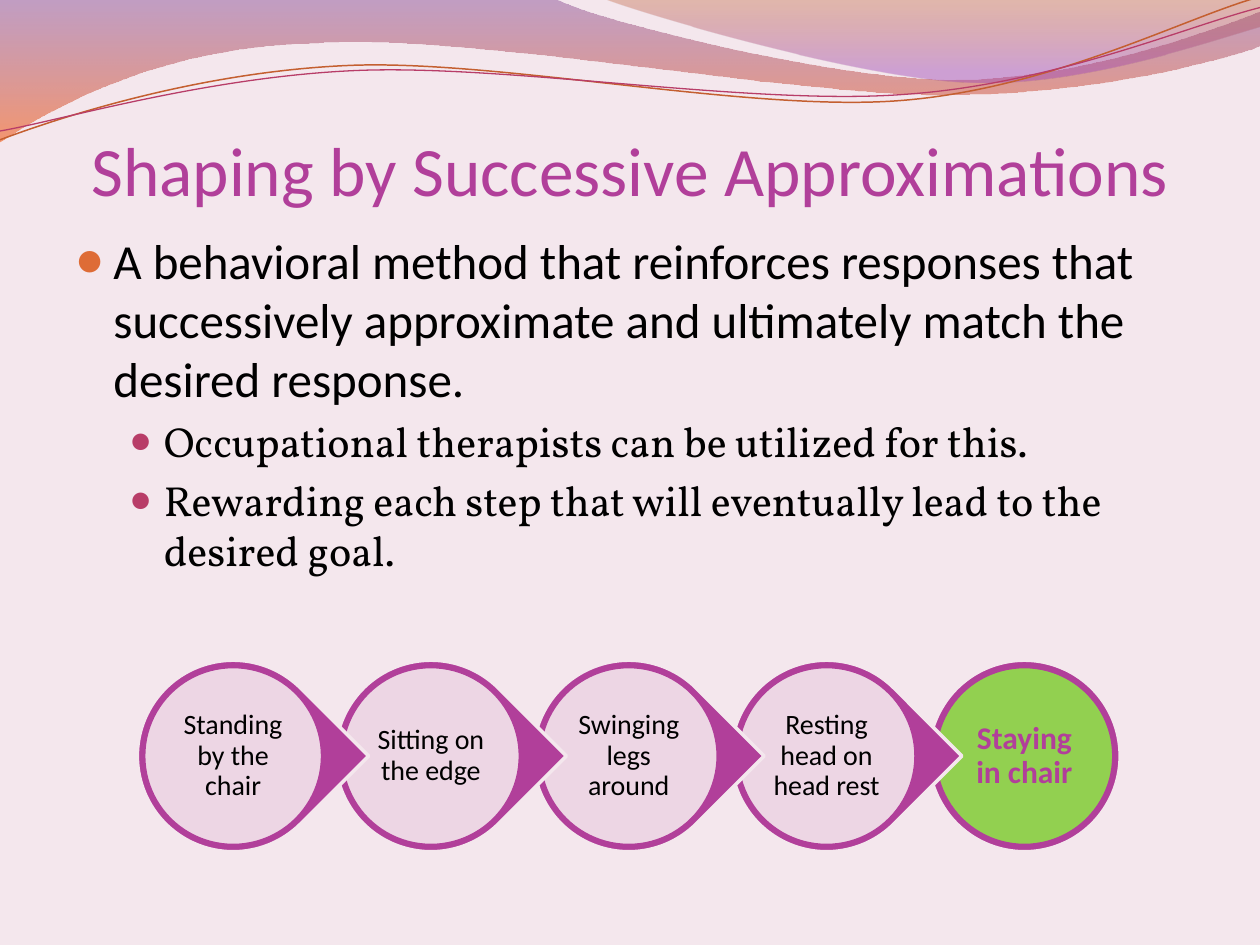
from lxml import etree
from pptx import Presentation
from pptx import util as u
from pptx.dml.color import RGBColor
from pptx.enum import shapes, text
from pptx.oxml import ns

COLORS = {
    "back": "F4E7ED", "accent": "B13F9A", "goal": "92D050", "ink": "000000",
    "plum": "834591", "orange": "F35307", "rust": "B74915", "violet": "A14BB4",
    "copper": "C45F30", "rose": "B83D68", "bullet": "DE6C36",
}
TITLE = "Shaping by Successive Approximations"
BODY = [
    (0, "A behavioral method that reinforces responses that successively "
        "approximate and ultimately match the desired response."),
    (1, "Occupational therapists can be utilized for this."),
    (1, "Rewarding each step that will eventually lead to the desired goal."),
]
LEVELS = [
    dict(size=28, font="Calibri", bullet="bullet", percent=95, indent=0.3, hang=0.3),
    dict(size=24, font="Vollkorn", bullet="rose", percent=85, indent=0.7, hang=0.27),
]
STEPS = ["Standing by the chair", "Sitting on the edge", "Swinging legs around",
         "Resting head on head rest", "Staying in chair"]
BANDS = [
    ([(0, 0), (4.4, -0.01), (4.76, 0.17, 6.64, 0.63, 7.58, 0.63),
      (8.53, 0.63, 9.58, 0.26, 10, 0.09), (10.01, 0.36),
      (9.83, 0.44, 8.7, 0.76, 7.46, 0.75), (6.22, 0.75, 3.82, 0.28, 2.57, 0.34),
      (1.29, 0.36, 0.46, 0.83, -0.01, 1.13)],
     [(0, "plum", 45), (1, "orange", 55)]),
    ([(4.79, -0.01), (5.09, 0.11, 6.82, 0.62, 7.69, 0.65),
      (8.56, 0.69, 9.61, 0.32, 10, 0.21), (10, 0)],
     [(0, "rust", 30), (0.8, "violet", 45)]),
]
CURVES = [
    ([(0, 1.11), (0.48, 0.93, 1.58, 0.57, 2.77, 0.52),
      (3.95, 0.47, 5.93, 0.89, 7.13, 0.8), (8.33, 0.71, 9.38, 0.15, 9.98, -0.02)],
     "copper", 0.85),
    ([(0, 1.04), (0.47, 0.96, 1.64, 0.61, 2.83, 0.56),
      (4.03, 0.51, 5.97, 0.84, 7.17, 0.75), (8.36, 0.67, 9.41, 0.21, 10, 0.06)],
     "rose", 0.75),
]
FIRST_CENTER, PITCH, CENTER_Y = 1.85, 1.57, 6
DROP, DISC, LABEL = 1.52, 1.42, 1.01


def color(name):
    return RGBColor.from_string(COLORS[name])


def set_opacity(shape, percents):
    for tone, percent in zip(shape.element.spPr.iter(ns.qn("a:srgbClr")), percents):
        etree.SubElement(tone, ns.qn("a:alpha"), val=str(percent * 1000))


def add_outline(page, commands, close):
    points = [(u.Inches(command[i]), u.Inches(command[i + 1]))
              for command in commands for i in range(0, len(command), 2)]
    builder = page.shapes.build_freeform(*points[0])
    builder.add_line_segments(points[1:], close=close)
    shape = builder.convert_to_shape()
    shape.shadow.inherit = False
    segments = iter(list(shape.element.spPr.iter(ns.qn("a:lnTo"))))
    for command in commands[1:]:
        group = [next(segments) for _ in range(len(command) // 2)]
        if len(group) == 3:
            bend = etree.Element(ns.qn("a:cubicBezTo"))
            group[0].addprevious(bend)
            for segment in group:
                bend.append(segment[0])
                segment.getparent().remove(segment)
    return shape


def write(para, words, size, font="Calibri", tone="ink", bold=False, align=None):
    span = para.add_run()
    span.text = words
    span.font.size = u.Pt(size)
    span.font.name = font
    span.font.bold = bold
    span.font.color.rgb = color(tone)
    para.alignment = align


def set_frame(frame, anchor, margins):
    frame.word_wrap = True
    frame.auto_size = text.MSO_AUTO_SIZE.NONE
    frame.vertical_anchor = anchor
    (frame.margin_left, frame.margin_top,
     frame.margin_right, frame.margin_bottom) = [u.Inches(m) for m in margins]


def place(shape, left, top, width, height):
    shape.left, shape.top, shape.width, shape.height = [
        u.Inches(n) for n in (left, top, width, height)]


def set_bullet(para, tone, percent, indent, hang):
    props = para._p.get_or_add_pPr()
    props.set("marL", str(u.Inches(indent)))
    props.set("indent", str(u.Inches(-hang)))
    holder = etree.SubElement(props, ns.qn("a:buClr"))
    etree.SubElement(holder, ns.qn("a:srgbClr"), val=COLORS[tone])
    etree.SubElement(props, ns.qn("a:buSzPct"), val=str(percent * 1000))
    etree.SubElement(props, ns.qn("a:buFont"), typeface="Calibri")
    etree.SubElement(props, ns.qn("a:buChar"), char="●")


def centered(center, size):
    return [u.Inches(n) for n in (center - size / 2, CENTER_Y - size / 2, size, size)]


def add_round(page, kind, center, size, fill, line):
    shape = page.shapes.add_shape(kind, *centered(center, size))
    shape.shadow.inherit = False
    shape.fill.solid()
    shape.fill.fore_color.rgb = color(fill)
    shape.line.color.rgb = color(line)
    shape.line.width = u.Pt(2)
    return shape


def add_waves(page):
    for commands, stops in BANDS:
        band = add_outline(page, commands, True)
        band.line.fill.background()
        band.fill.gradient()
        band.fill.gradient_angle = 270
        for stop, (position, tone, _) in zip(band.fill.gradient_stops, stops):
            stop.position = position
            stop.color.rgb = color(tone)
        set_opacity(band, [opacity for _, _, opacity in stops])
    for commands, tone, width in CURVES:
        curve = add_outline(page, commands, False)
        curve.fill.background()
        curve.line.color.rgb = color(tone)
        curve.line.width = u.Pt(width)


def add_copy(page):
    title, body = page.placeholders
    for holder in (title, body):
        page.shapes.element.append(holder.element)
    place(title, 0.5, 0.17, 9, 1.5)
    set_frame(title.text_frame, text.MSO_ANCHOR.BOTTOM, (0, 0.05, 0, 0))
    write(title.text_frame.paragraphs[0], TITLE, 39.6, tone="accent",
          align=text.PP_ALIGN.CENTER)
    place(body, 0.5, 1.78, 9, 4.8)
    frame = body.text_frame
    set_frame(frame, text.MSO_ANCHOR.TOP, (0.1, 0.05, 0.1, 0.05))
    for index, (level, words) in enumerate(BODY):
        para = frame.add_paragraph() if index else frame.paragraphs[0]
        style = LEVELS[level]
        para.level = level
        para.space_before = u.Pt(0.2 * style["size"] if index else 0)
        set_bullet(para, style["bullet"], style["percent"], style["indent"], style["hang"])
        write(para, words, style["size"], style["font"])


def add_steps(page):
    last = len(STEPS) - 1
    for index in range(last, -1, -1):
        goal = index == last
        center = FIRST_CENTER + index * PITCH
        kind = shapes.MSO_SHAPE.OVAL if goal else shapes.MSO_SHAPE.TEAR
        drop = add_round(page, kind, center, DROP, "accent", "back")
        drop.rotation = 0 if goal else 45
        disc = add_round(page, shapes.MSO_SHAPE.OVAL, center, DISC,
                         "goal" if goal else "back", "accent")
        if not goal:
            set_opacity(disc, [90])
        box = page.shapes.add_textbox(*centered(center, LABEL))
        set_frame(box.text_frame, text.MSO_ANCHOR.MIDDLE, [0.03 if goal else 0.02] * 4)
        para = box.text_frame.paragraphs[0]
        para.line_spacing = 0.9
        write(para, STEPS[index], 18 if goal else 16, bold=goal,
              tone="accent" if goal else "ink", align=text.PP_ALIGN.CENTER)


def main():
    deck = Presentation()
    deck.slide_width, deck.slide_height = u.Inches(10), u.Inches(7.5)
    page = deck.slides.add_slide(deck.slide_layouts[1])
    page.background.fill.solid()
    page.background.fill.fore_color.rgb = color("back")
    add_waves(page)
    add_copy(page)
    add_steps(page)
    deck.save("out.pptx")


if __name__ == "__main__":
    main()
